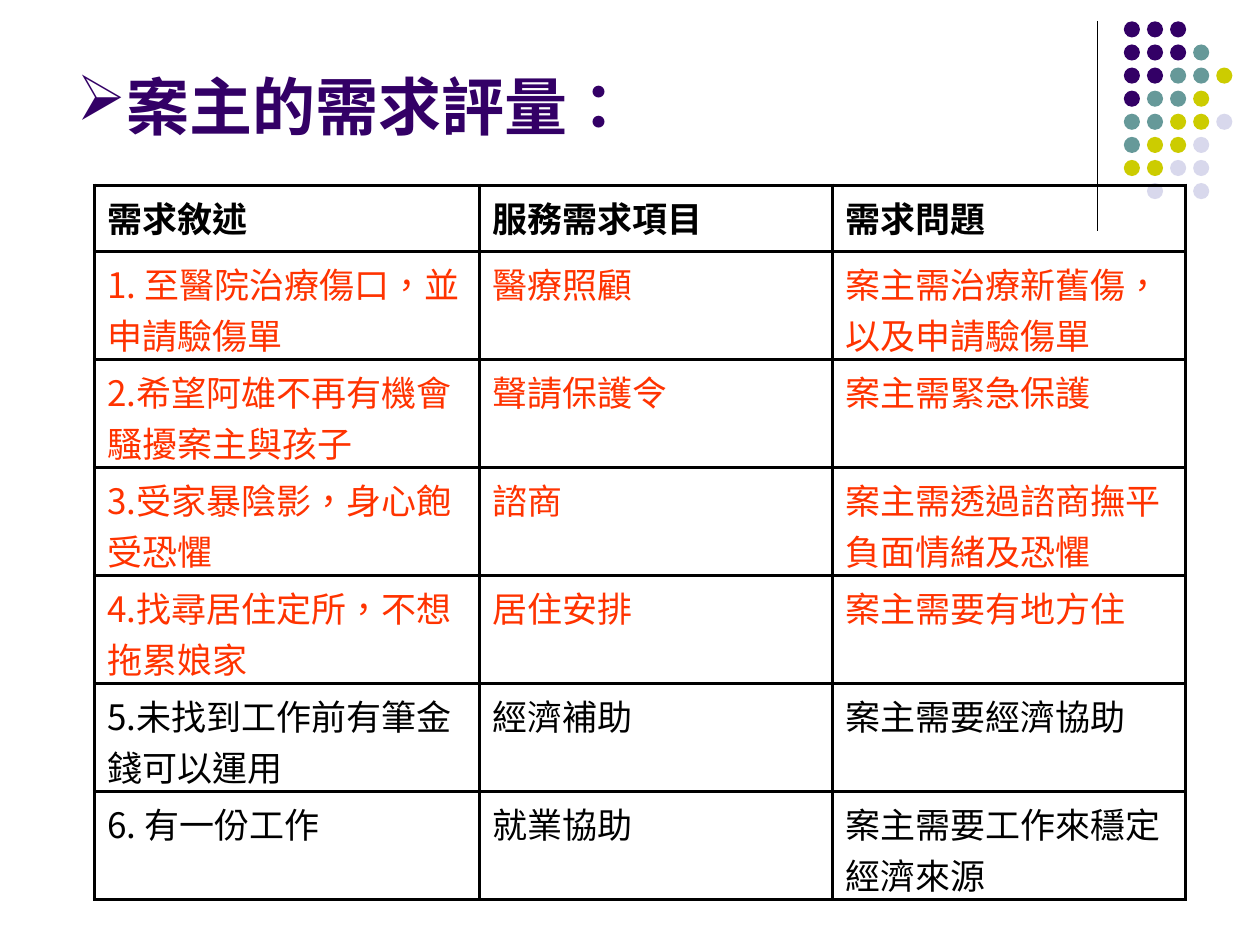
from dataclasses import dataclass

from lxml import etree
from pptx import Presentation
from pptx import util as u
from pptx.dml.color import RGBColor
from pptx.enum import lang, shapes, text
from pptx.oxml.ns import qn


@dataclass(frozen=True)
class Theme:
    face: str = "Noto Sans CJK SC"
    ink: str = "000000"
    plum: str = "330066"
    teal: str = "669999"
    lime: str = "CCCC00"
    mist: str = "D8D8EC"
    alert: str = "FF3300"
    head: int = 36
    body: int = 20
    rule: float = 0.75
    edge: float = 2


class Deck:
    """Draws styled elements on the current slide, measured in points."""

    def __init__(self, theme):
        self.theme = theme
        self.file = Presentation()
        self.file.slide_width, self.file.slide_height = u.Pt(720), u.Pt(540)
        self.slide = self.file.slides.add_slide(self.file.slide_layouts[6])

    def style(self, para, size, color, bold=False):
        font = para.font
        font.name, font.size, font.bold = self.theme.face, u.Pt(size), bold
        font.color.rgb = RGBColor.from_string(color)
        font.language_id = lang.MSO_LANGUAGE_ID.TRADITIONAL_CHINESE
        latin = font._element.find(qn("a:latin"))
        asian = etree.Element(qn("a:ea"), typeface=self.theme.face)
        latin.addnext(asian)

    def line(self, x1, y1, x2, y2):
        rule = self.slide.shapes.add_connector(
            shapes.MSO_CONNECTOR.STRAIGHT, u.Pt(x1), u.Pt(y1), u.Pt(x2), u.Pt(y2))
        rule.line.width = u.Pt(self.theme.rule)
        rule.line.color.rgb = RGBColor.from_string(self.theme.ink)
        etree.SubElement(rule._element.spPr, qn("a:effectLst"))

    def dots(self, left, top, step, size, rows):
        tints = {"P": self.theme.plum, "T": self.theme.teal,
                 "Y": self.theme.lime, "L": self.theme.mist}
        for r, row in enumerate(rows):
            for c, code in enumerate(row):
                if code not in tints:
                    continue
                dot = self.slide.shapes.add_shape(
                    shapes.MSO_SHAPE.OVAL, u.Pt(left + c * step),
                    u.Pt(top + r * step), u.Pt(size), u.Pt(size))
                dot.shadow.inherit = False
                dot.fill.solid()
                dot.fill.fore_color.rgb = RGBColor.from_string(tints[code])
                dot.line.fill.background()

    def title(self, left, top, width, height, words, mark):
        box = self.slide.shapes.add_textbox(
            u.Pt(left), u.Pt(top), u.Pt(width), u.Pt(height))
        frame = box.text_frame
        frame.word_wrap = True
        frame.vertical_anchor = text.MSO_ANCHOR.MIDDLE
        para = frame.paragraphs[0]
        para.text = words
        self.style(para, self.theme.head, self.theme.plum, True)
        props = para._p.get_or_add_pPr()
        props.insert(0, etree.Element(qn("a:buChar"), char=mark))

    def border(self, cell):
        props = cell._tc.get_or_add_tcPr()
        for side in ("lnL", "lnR", "lnT", "lnB"):
            edge = etree.SubElement(
                props, qn(f"a:{side}"), w=str(u.Pt(self.theme.edge)))
            fill = etree.SubElement(edge, qn("a:solidFill"))
            etree.SubElement(fill, qn("a:srgbClr"), val=self.theme.ink)

    def table(self, left, top, cols, highs, rows, hot):
        grid = self.slide.shapes.add_table(
            len(rows), len(cols), u.Pt(left), u.Pt(top),
            u.Pt(sum(cols)), u.Pt(sum(highs))).table
        for col, width in zip(grid.columns, cols):
            col.width = u.Pt(width)
        for r, (row, high) in enumerate(zip(rows, highs)):
            grid.rows[r].height = u.Pt(high)
            color = self.theme.alert if r in hot else self.theme.ink
            for c, words in enumerate(row):
                cell = grid.cell(r, c)
                self.border(cell)
                cell.fill.background()
                cell.text = words
                para = cell.text_frame.paragraphs[0]
                self.style(para, self.theme.body, color, r == 0)


DOTS = ["PPP", "PPPT", "PPTTY", "PTTY", "TTYYL", "TYYL", "YYLL", ".L.L"]
NEEDS = [
    ("需求敘述", "服務需求項目", "需求問題"),
    ("1. 至醫院治療傷口，並申請驗傷單", "醫療照顧", "案主需治療新舊傷，以及申請驗傷單"),
    ("2.希望阿雄不再有機會騷擾案主與孩子", "聲請保護令", "案主需緊急保護"),
    ("3.受家暴陰影，身心飽受恐懼", "諮商", "案主需透過諮商撫平負面情緒及恐懼"),
    ("4.找尋居住定所，不想拖累娘家", "居住安排", "案主需要有地方住"),
    ("5.未找到工作前有筆金錢可以運用", "經濟補助", "案主需要經濟協助"),
    ("6. 有一份工作", "就業協助", "案主需要工作來穩定經濟來源"),
]


def main():
    deck = Deck(Theme())
    deck.line(627, 12, 627, 132)
    deck.dots(642.2, 12.2, 13.2, 9.2, DOTS)
    deck.title(36.7, 15, 648, 90, "案主的需求評量：", "➢")
    deck.table(54, 105.8, [220, 201.8, 201.8], [38.2] + [61.7] * 6,
               NEEDS, range(1, 5))
    deck.file.save("out.pptx")


if __name__ == "__main__":
    main()
